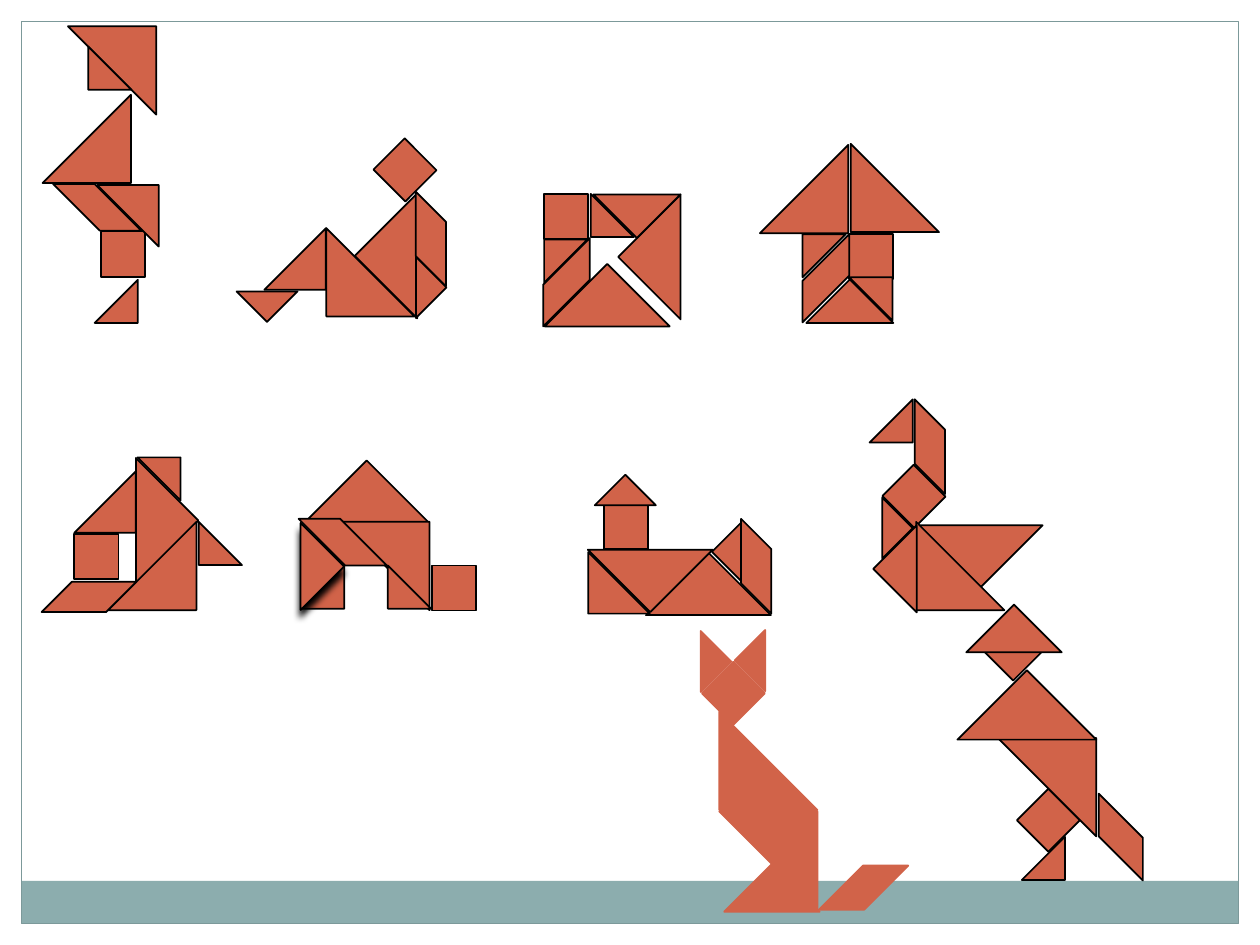
from lxml.etree import SubElement
from pptx import Presentation
from pptx.dml.color import RGBColor
from pptx.enum.shapes import MSO_SHAPE
from pptx.oxml.ns import qn
from pptx.util import Cm, Pt

COLORS = {"piece": "D16349", "outline": "000000", "band": "8CADAE", "frame": "7C999A"}

TRIANGLE, SQUARE = MSO_SHAPE.RIGHT_TRIANGLE, MSO_SHAPE.RECTANGLE
SLANT = "parallelogram"

# Tangram pieces: shape, width, height in cm
PIECES = {
    "large": (TRIANGLE, 1.78, 1.78),
    "medium": (TRIANGLE, 1.24, 1.24),
    "small": (TRIANGLE, 0.87, 0.87),
    "big large": (TRIANGLE, 1.98, 1.98),
    "big medium": (TRIANGLE, 1.36, 1.36),
    "square": (SQUARE, 0.89, 0.91),
    "diamond": (MSO_SHAPE.DIAMOND, 1.27, 1.27),
    "thin tall": (SLANT, 0.61, 1.91),
    "thin flat": (SLANT, 1.91, 0.61),
    "tall": (SLANT, 0.94, 1.78),
    "flat": (SLANT, 1.78, 0.94),
    "big tall": (SLANT, 0.89, 1.75),
    "big flat": (SLANT, 1.80, 0.89),
}

# Figures: origin, then pieces as name, left, top, rotation, mirrored
FIGURES = {
    "sitter": ((4, 2), [
        ("large", 3.52, 2.27, 45, False), ("small", 0.95, 3.44, 45, True),
        ("square", 3.72, 0.97, 315, False), ("medium", 1.33, 2.6, 270, False),
        ("large", 2.58, 2.6, 0, False), ("small", 3.95, 3.36, 225, False),
        ("thin tall", 4.38, 1.86, 0, False)]),
    "dancer": ((0.5, 0.5), [
        ("square", 1.53, 4.17, 0, False), ("large", 0.87, 0.03, 180, False),
        ("medium", 1.46, 3.23, 180, False), ("large", 0.36, 1.41, 270, False),
        ("small", 1.28, 0.44, 0, False), ("small", 1.41, 5.14, 0, True),
        ("flat", 0.57, 3.21, 0, False)]),
    "broken square": ((10, 3), [
        ("square", 0.97, 0.91, 0, False), ("large", 2.83, 1.29, 45, False),
        ("medium", 2.22, 0.3, 315, False), ("large", 1.35, 2.69, 135, False),
        ("small", 1.91, 0.91, 0, False), ("small", 0.97, 1.83, 180, True),
        ("tall", 0.95, 1.8, 0, True)]),
    "arrow": ((15, 2.5), [
        ("medium", 1.51, 3.39, 225, True), ("square", 2.12, 2.22, 0, False),
        ("large", 2.15, 0.4, 0, False), ("large", 0.32, 0.42, 270, False),
        ("small", 2.12, 3.09, 180, False), ("small", 1.18, 2.22, 180, True),
        ("tall", 1.18, 2.22, 0, True)]),
    "house": ((0.5, 9), [
        ("medium", 1, 0.5, 0, True), ("square", 1, 1.77, 0, False),
        ("large", 1.35, 0.6, 225, False), ("large", 1.68, 1.52, 270, False),
        ("small", 2.27, 0.22, 180, False), ("small", 3.51, 1.52, 90, True),
        ("thin flat", 0.34, 2.73, 0, True)]),
    "bridge": ((5, 9), [
        ("square", 3.71, 2.4, 0, False), ("large", 1.5, 0.65, 135, False),
        ("large", 1.88, 1.52, 180, False), ("small", 1.07, 2.4, 270, False),
        ("small", 2.82, 2.4, 90, True), ("flat", 1.02, 1.46, 0, False)]),
    "boat": ((11, 9), [
        ("large", 2.39, 2.51, 225, True), ("medium", 0.86, 2.13, 90, True),
        ("square", 1.17, 1.16, 0, False), ("large", 1.22, 1.19, 45, True),
        ("small", 1.17, 0.75, 135, False), ("small", 3.53, 1.69, 135, True),
        ("thin tall", 3.94, 1.46, 0, False)]),
    "swan": ((17, 8), [
        ("square", 0.98, 1.55, 315, False), ("large", 1.87, 1.7, 45, True),
        ("large", 1.47, 2.52, 90, True), ("small", 0.53, 0.05, 270, False),
        ("small", 0.35, 2.21, 225, False), ("thin tall", 1.44, 0.05, 0, False),
        ("medium", 0.86, 2.85, 45, False)]),
    "walker": ((19, 12), [
        ("small", 0.99, 0.67, 315, False), ("big medium", 0.76, 0.47, 135, False),
        ("diamond", 1.5, 3.9, 0, False), ("big large", 1.12, 2.88, 270, True),
        ("small", 1.6, 4.87, 0, True), ("big large", 0.71, 1.92, 135, False),
        ("big tall", 3.15, 4, 0, False)]),
    "cat": ((13, 12.5), [
        ("small", 0.69, 0.4, 315, True), ("big medium", 1.88, 5.2, 225, True),
        ("diamond", 1.15, 0.84, 0, False), ("big large", 1.5, 1.85, 90, True),
        ("small", 1.99, 0.38, 135, True), ("big large", 1.5, 3.86, 180, False),
        ("big flat", 3.51, 4.95, 0, True)]),
}


def style(sp, fill=None, line=None, width=1):
    sp.shadow.inherit = False
    if fill:
        sp.fill.solid()
        sp.fill.fore_color.rgb = RGBColor.from_string(COLORS[fill])
    else:
        sp.fill.background()
    if line:
        sp.line.color.rgb = RGBColor.from_string(COLORS[line])
        sp.line.width = Pt(width)
    else:
        sp.line.fill.background()


def add_slant(shapes, x, y, w, h, rising):
    """Parallelogram with 45° slants; its straight sides follow the longer way."""
    side = abs(w - h)
    if w > h:
        corners = [(0, 0), (side, 0), (w, h), (h, h)]
    else:
        corners = [(0, 0), (w, w), (w, h), (0, side)]
    points = [(Cm(x + (w - cx if rising else cx)), Cm(y + cy)) for cx, cy in corners]
    builder = shapes.build_freeform(*points[0])
    builder.add_line_segments(points[1:], close=True)
    return builder.convert_to_shape()


def add_piece(shapes, origin, piece, line):
    name, left, top, rotation, mirrored = piece
    kind, w, h = PIECES[name]
    x, y = origin[0] + left, origin[1] + top
    if kind == SLANT:
        sp = add_slant(shapes, x, y, w, h, mirrored)
    else:
        sp = shapes.add_shape(kind, Cm(x), Cm(y), Cm(w), Cm(h))
        sp.rotation = rotation
        if mirrored:
            sp._element.spPr.find(qn("a:xfrm")).set("flipH", "1")
    style(sp, "piece", line)
    return sp


def add_figure(slide, origin, pieces, line="outline"):
    group = slide.shapes.add_group_shape()
    for piece in pieces:
        add_piece(group.shapes, origin, piece, line)


def add_shadow(sp):
    effects = sp._element.spPr.find(qn("a:effectLst"))
    shadow = SubElement(effects, qn("a:outerShdw"), blurRad=str(Pt(4)),
                        dist=str(Pt(4)), dir="5400000")
    SubElement(shadow, qn("a:srgbClr"), val=COLORS["outline"])


def add_frame(slide, x, y, w, h, band=0.86):
    bottom = slide.shapes.add_shape(SQUARE, Cm(x), Cm(y + h - band), Cm(w), Cm(band))
    style(bottom, "band")
    border = slide.shapes.add_shape(SQUARE, Cm(x), Cm(y), Cm(w), Cm(h))
    style(border, line="frame", width=0.75)


def main():
    prs = Presentation()
    prs.slide_width, prs.slide_height = Cm(25.4), Cm(19.05)
    slide = prs.slides.add_slide(prs.slide_layouts[6])

    add_frame(slide, 0.43, 0.43, 24.54, 18.19)
    for name, (origin, pieces) in FIGURES.items():
        add_figure(slide, origin, pieces, "piece" if name == "cat" else "outline")
        if name == "bridge":
            # The loose triangle that completes the bridge
            loose = ("medium", 0.44, 1.8, 315, True)
            add_shadow(add_piece(slide.shapes, origin, loose, "outline"))

    prs.save("out.pptx")


if __name__ == "__main__":
    main()
